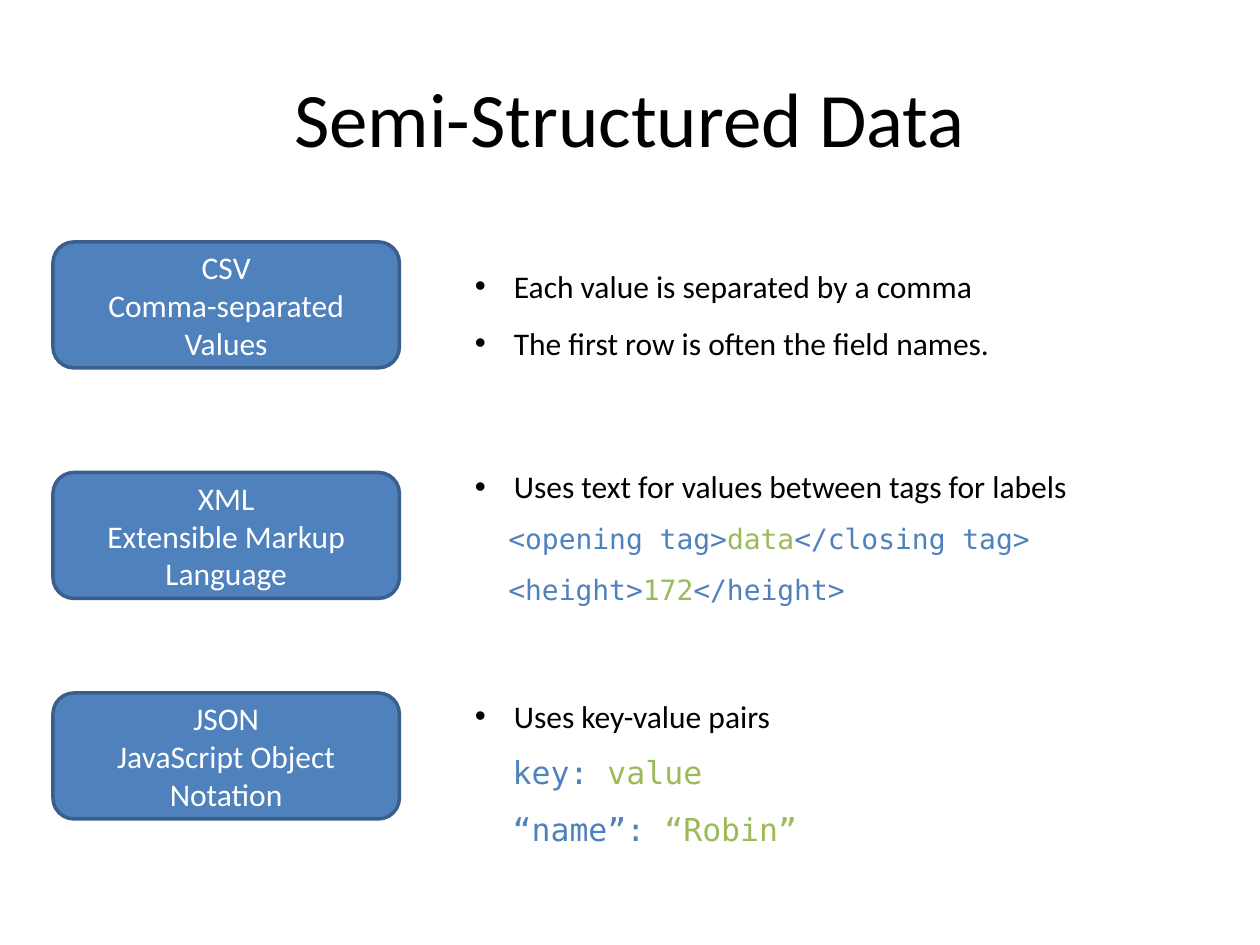
from lxml.etree import SubElement
from pptx import Presentation
from pptx.dml.color import RGBColor
from pptx.enum.shapes import MSO_SHAPE
from pptx.enum.text import MSO_ANCHOR, MSO_AUTO_SIZE, PP_ALIGN
from pptx.oxml.ns import qn
from pptx.util import Inches, Pt

COLORS = {"text": "000000", "white": "FFFFFF", "blue": "4F81BD",
          "outline": "3A5F8C", "green": "9BBB59"}
BODY_FONT = "Calibri"
CODE_FONT = "DejaVu Sans Mono"
TITLE = "Semi-Structured Data"
FORMATS = [
    {"label": ["CSV", "Comma-separated Values"], "box_top": 1.92,
     "notes_top": 1.92, "notes_height": 0.96,
     "bullets": ["Each value is separated by a comma",
                 "The first row is often the field names."],
     "code_size": 18, "code": []},
    {"label": ["XML", "Extensible Markup Language"], "box_top": 3.75,
     "notes_top": 3.51, "notes_height": 1.32,
     "bullets": ["Uses text for values between tags for labels"],
     "code_size": 16,
     "code": [[("<opening tag>", "blue"), ("data", "green"), ("</closing tag>", "blue")],
              [("<height>", "blue"), ("172", "green"), ("</height>", "blue")]]},
    {"label": ["JSON", "JavaScript Object Notation"], "box_top": 5.5,
     "notes_top": 5.33, "notes_height": 1.42,
     "bullets": ["Uses key-value pairs"],
     "code_size": 18,
     "code": [[("key: ", "blue"), ("value", "green")],
              [("“name”: ", "blue"), ("“Robin”", "green")]]},
]
BULLET_INDENT = 0.31
CODE_INDENT_PER_POINT = 1.2 / 72


def rgb(name):
    return RGBColor.from_string(COLORS[name])


def add_span(para, text, size, color, font=BODY_FONT):
    span = para.add_run()
    span.text = text
    span.font.name = font
    span.font.size = Pt(size)
    span.font.color.rgb = rgb(color)


def next_para(frame, index):
    return frame.add_paragraph() if index else frame.paragraphs[0]


def indent(para, left, first=0, bullet=None):
    properties = para._p.get_or_add_pPr()
    properties.set("marL", str(Inches(left)))
    properties.set("indent", str(Inches(first)))
    if bullet:
        SubElement(properties, qn("a:buFont")).set("typeface", "Arial")
        SubElement(properties, qn("a:buChar")).set("char", bullet)


def add_label(page, entry):
    box = page.shapes.add_shape(MSO_SHAPE.ROUNDED_RECTANGLE, Inches(0.42),
                                Inches(entry["box_top"]), Inches(2.75), Inches(1))
    box.shadow.inherit = False
    box.fill.solid()
    box.fill.fore_color.rgb = rgb("blue")
    box.line.color.rgb = rgb("outline")
    box.line.width = Pt(2)
    frame = box.text_frame
    frame.word_wrap = True
    frame.vertical_anchor = MSO_ANCHOR.MIDDLE
    for index, text in enumerate(entry["label"]):
        para = next_para(frame, index)
        para.alignment = PP_ALIGN.CENTER
        add_span(para, text, 18, "white")


def add_notes(page, entry):
    box = page.shapes.add_textbox(Inches(3.67), Inches(entry["notes_top"]),
                                  Inches(5.92), Inches(entry["notes_height"]))
    frame = box.text_frame
    frame.word_wrap = True
    frame.auto_size = MSO_AUTO_SIZE.SHAPE_TO_FIT_TEXT
    for index, text in enumerate(entry["bullets"]):
        para = next_para(frame, index)
        para.line_spacing = 1.5
        indent(para, BULLET_INDENT, -BULLET_INDENT, "•")
        add_span(para, text, 18, "text")
    size = entry["code_size"]
    for spans in entry["code"]:
        para = frame.add_paragraph()
        para.line_spacing = 1.5
        indent(para, size * CODE_INDENT_PER_POINT)
        for text, color in spans:
            add_span(para, text, size, color, CODE_FONT)


def main():
    deck = Presentation()
    deck.slide_width, deck.slide_height = Inches(10), Inches(7.5)
    page = deck.slides.add_slide(deck.slide_layouts[5])
    title = page.shapes.title
    title.left, title.top = Inches(0.5), Inches(0.3)
    title.width, title.height = Inches(9), Inches(1.25)
    title.text_frame.vertical_anchor = MSO_ANCHOR.MIDDLE
    para = title.text_frame.paragraphs[0]
    para.alignment = PP_ALIGN.CENTER
    add_span(para, TITLE, 44, "text")
    for entry in FORMATS:
        add_label(page, entry)
        add_notes(page, entry)
    deck.save("out.pptx")


if __name__ == "__main__":
    main()
